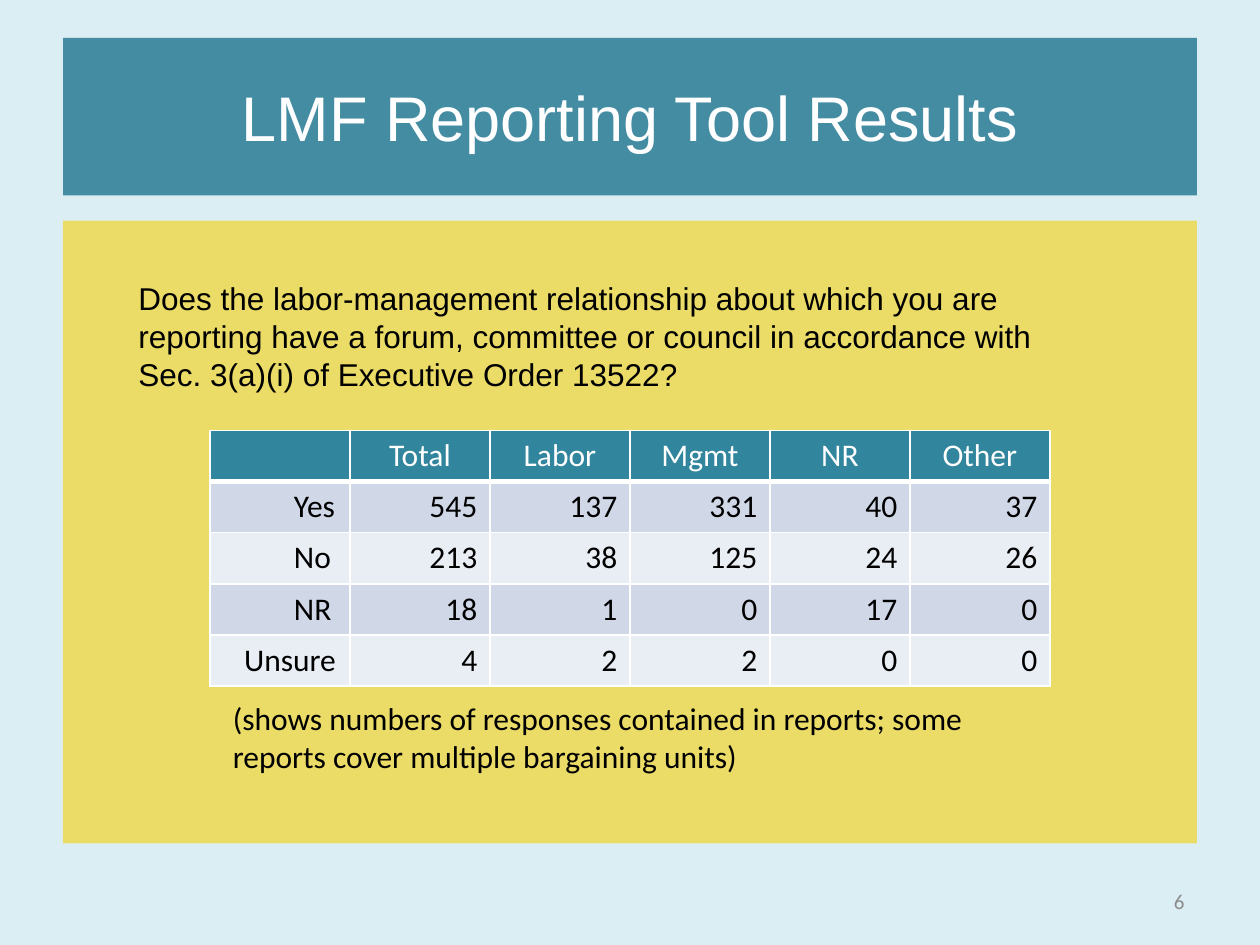
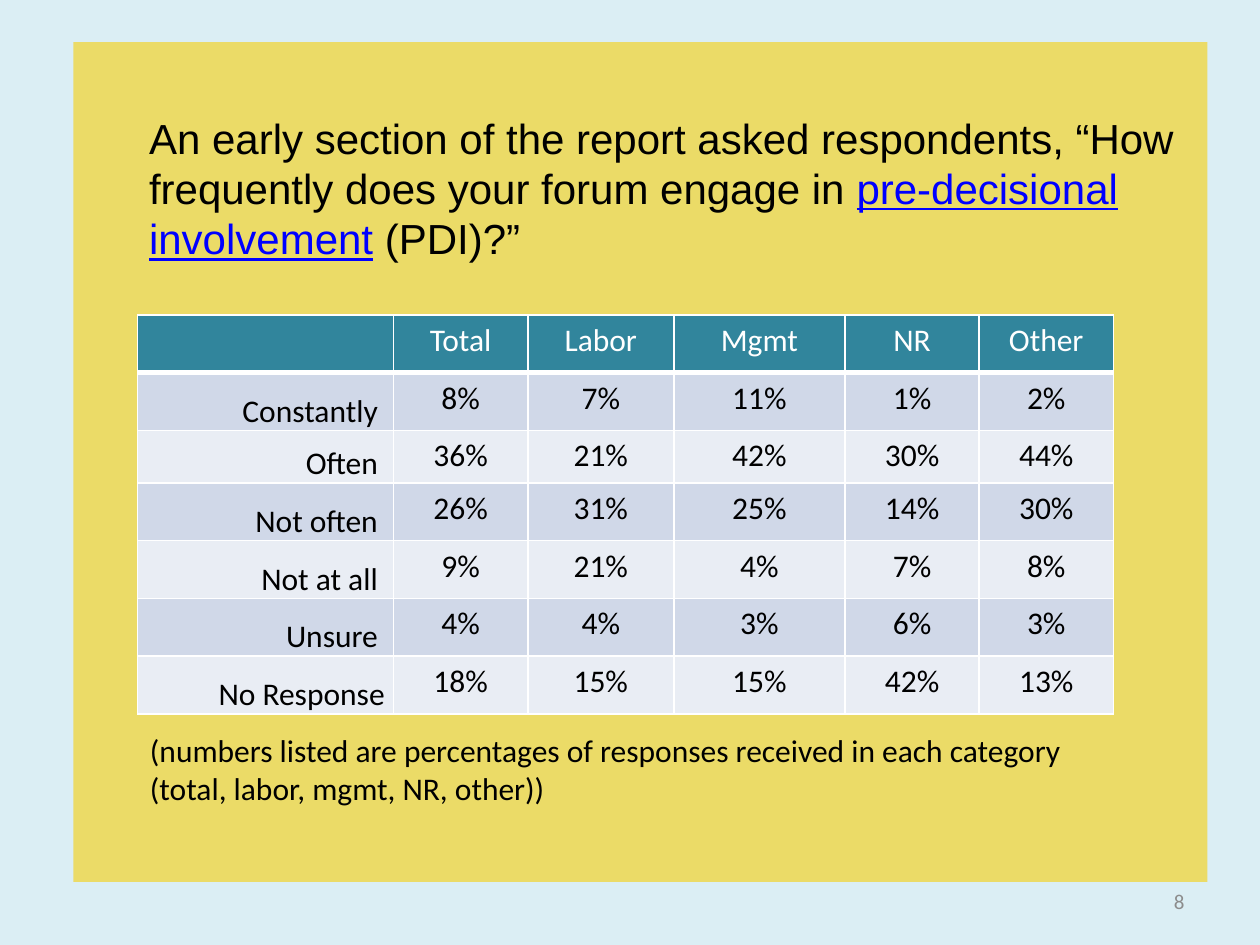
"""Build the two slides of survey results on labor-management forums."""
import dataclasses
import typing

import lxml.etree
import pptx
import pptx.dml.color
import pptx.enum.shapes
import pptx.enum.text
import pptx.oxml.ns
import pptx.util

Pt = pptx.util.Pt
ALIGN = pptx.enum.text.PP_ALIGN
ANCHOR = pptx.enum.text.MSO_ANCHOR


@dataclasses.dataclass(frozen=True)
class Theme:
    """Colours, fonts and type sizes of the deck."""
    back: str = "DBEEF4"
    band: str = "448CA2"
    panel: str = "EBDB67"
    header: str = "31859C"
    stripes: tuple[str, str] = ("D0D8E8", "E9EDF4")
    white: str = "FFFFFF"
    ink: str = "000000"
    link: str = "0000FF"
    muted: str = "8C8C8C"
    heading_font: str = "Arial"
    body_font: str = "Calibri"
    title: float = 36
    question: float = 24
    text: float = 18
    footer: float = 12


T = Theme()


class Box(typing.NamedTuple):
    """Position and size in points."""
    x: float
    y: float
    w: float
    h: float


class Style(typing.NamedTuple):
    """Look of a piece of text."""
    size: float = T.text
    font: str = T.body_font
    color: str = T.ink
    underline: bool = False


class Label(typing.NamedTuple):
    """Row label with its side margins in points."""
    text: str
    left: float
    right: float


@dataclasses.dataclass(frozen=True)
class Grid:
    """Table of answers by respondent group."""
    x: float
    y: float
    widths: list[float]
    heights: list[float]
    labels: list[Label]
    values: list[list[str]]
    label_format: dict[str, typing.Any]
    label_align: ALIGN
    value_align: ALIGN


GROUPS = ["Total", "Labor", "Mgmt", "NR", "Other"]
HEADING = Style(T.title, T.heading_font, T.white)
INTRO = Style(T.text, T.heading_font)
QUESTION = Style(T.question, T.heading_font)
TERM = QUESTION._replace(color=T.link, underline=True)

FORUM_GRID = Grid(
    120, 246, [80] * 6, [29.2] * 5,
    [Label("Yes", 48, 0), Label("No", 48, 0), Label("NR", 48, 0), Label("Unsure", 19.5, 0)],
    [row.split() for row in (
        "545 137 331 40 37", "213 38 125 24 26", "18 1 0 17 0", "4 2 2 0 0")],
    {}, ALIGN.LEFT, ALIGN.RIGHT)

PDI_GRID = Grid(
    78.6, 180, [146.3, 76.7, 83.5, 97.8, 76.7, 76.7], [33, 33, 30, 33, 33, 33, 33],
    [Label(text, 5, 9) for text in
     ("Constantly", "Often", "Not often", "Not at all", "Unsure")]
    + [Label("No Response", 5, 5)],
    [[f"{n}%" for n in row] for row in (
        (8, 7, 11, 1, 2), (36, 21, 42, 30, 44), (26, 31, 25, 14, 30),
        (9, 21, 4, 7, 8), (4, 4, 3, 6, 3), (18, 15, 15, 42, 13))],
    {"vertical_anchor": ANCHOR.BOTTOM, "margin_top": 0, "margin_bottom": 0},
    ALIGN.RIGHT, ALIGN.CENTER)


def rgb(color: str) -> pptx.dml.color.RGBColor:
    """Turn a hex string into a colour."""
    return pptx.dml.color.RGBColor.from_string(color)


def apply(target: typing.Any, formats: dict[str, typing.Any]) -> None:
    """Set each attribute named in the formats."""
    for name, value in formats.items():
        setattr(target, name, value)


def place(sp: typing.Any, box: Box) -> None:
    """Move and size a shape."""
    apply(sp, dict(zip(("left", "top", "width", "height"), map(Pt, box))))


def paint(target: typing.Any, color: str) -> None:
    """Give a shape, cell or background a solid fill."""
    target.fill.solid()
    target.fill.fore_color.rgb = rgb(color)


def write(tf: typing.Any, runs: list[tuple[str, Style]], align: ALIGN = ALIGN.LEFT) -> None:
    """Write styled runs into the first paragraph."""
    p = tf.paragraphs[0]
    p.alignment = align
    for text, style in runs:
        r = p.add_run()
        r.text = text
        apply(r.font, {"size": Pt(style.size), "name": style.font,
                       "underline": style.underline, "bold": False})
        r.font.color.rgb = rgb(style.color)


def add_panel(s: typing.Any, box: Box) -> typing.Any:
    """Add the plain yellow panel."""
    sp = s.shapes.add_shape(pptx.enum.shapes.MSO_SHAPE.RECTANGLE, *map(Pt, box))
    sp.shadow.inherit = False
    paint(sp, T.panel)
    sp.line.fill.background()
    return sp


def add_text(s: typing.Any, box: Box, text: str, style: Style = Style(),
             align: ALIGN = ALIGN.LEFT, anchor: ANCHOR = ANCHOR.TOP) -> None:
    """Add a wrapping text box."""
    tf = s.shapes.add_textbox(*map(Pt, box)).text_frame
    apply(tf, {"word_wrap": True, "vertical_anchor": anchor})
    write(tf, [(text, style)], align)


def add_number(s: typing.Any, number: int) -> None:
    """Add the page number at the lower right."""
    add_text(s, Box(516, 500.5, 168, 28.8), str(number),
             Style(T.footer, color=T.muted), ALIGN.RIGHT, ANCHOR.MIDDLE)


def add_borders(cell: typing.Any, bottom: float) -> None:
    """Draw white cell borders."""
    tc_pr = cell._tc.get_or_add_tcPr()
    qn = pptx.oxml.ns.qn
    for side, width in (("L", 1), ("R", 1), ("T", 1), ("B", bottom)):
        ln = lxml.etree.SubElement(tc_pr, qn(f"a:ln{side}"), w=str(Pt(width)))
        fill = lxml.etree.SubElement(ln, qn("a:solidFill"))
        lxml.etree.SubElement(fill, qn("a:srgbClr"), val=T.white)


def fill_cell(cell: typing.Any, text: str, fill: str, align: ALIGN,
              color: str = T.ink, bottom: float = 1) -> None:
    """Border, colour and write one cell."""
    add_borders(cell, bottom)
    paint(cell, fill)
    write(cell.text_frame, [(text, Style(color=color))], align)


def add_grid(s: typing.Any, grid: Grid) -> None:
    """Add a table with a header row and striped answer rows."""
    rows, cols = len(grid.heights), len(grid.widths)
    box = Box(grid.x, grid.y, sum(grid.widths), sum(grid.heights))
    table = s.shapes.add_table(rows, cols, *map(Pt, box)).table
    apply(table, {"first_row": False, "horz_banding": False})
    for column, width in zip(table.columns, grid.widths):
        column.width = Pt(width)
    for row, height in zip(table.rows, grid.heights):
        row.height = Pt(height)
    for col, text in enumerate(["", *GROUPS]):
        fill_cell(table.cell(0, col), text, T.header, ALIGN.CENTER, T.white, 3)
    for i, (label, values) in enumerate(zip(grid.labels, grid.values)):
        stripe = T.stripes[i % 2]
        cell = table.cell(i + 1, 0)
        apply(cell, {"margin_left": Pt(label.left), "margin_right": Pt(label.right),
                     **grid.label_format})
        fill_cell(cell, label.text, stripe, grid.label_align)
        for col, value in enumerate(values, 1):
            fill_cell(table.cell(i + 1, col), value, stripe, grid.value_align)


def build_forum_slide(prs: typing.Any) -> None:
    """Show how many relationships have a forum."""
    s = prs.slides.add_slide(prs.slide_layouts.get_by_name("Title Only"))
    title = s.shapes.title
    place(title, Box(36, 21.6, 648, 90))
    paint(title, T.band)
    title.text_frame.vertical_anchor = ANCHOR.MIDDLE
    write(title.text_frame, [("LMF Reporting Tool Results", HEADING)], ALIGN.CENTER)
    add_panel(s, Box(36, 126, 648, 356))
    add_grid(s, FORUM_GRID)
    add_text(s, Box(72, 156, 564, 72.7),
             "Does the labor-management relationship about which you are reporting have "
             "a forum, committee or council in accordance with Sec. 3(a)(i) of "
             "Executive Order 13522?", INTRO)
    add_text(s, Box(126, 396, 474, 51),
             "(shows numbers of responses contained in reports; some reports cover "
             "multiple bargaining units)")
    add_number(s, 6)


def build_pdi_slide(prs: typing.Any) -> None:
    """Show how often forums engage in pre-decisional involvement."""
    s = prs.slides.add_slide(prs.slide_layouts.get_by_name("Blank"))
    tf = add_panel(s, Box(42, 24, 648, 480)).text_frame
    apply(tf, {"word_wrap": True, "vertical_anchor": ANCHOR.TOP,
               "margin_left": Pt(43.2), "margin_top": Pt(40)})
    write(tf, [("An early section of the report asked respondents, “How frequently "
                "does your forum engage in ", QUESTION),
               ("pre-decisional involvement", TERM),
               (" (PDI)?”", QUESTION)])
    add_grid(s, PDI_GRID)
    add_text(s, Box(78.6, 414, 564, 51),
             "(numbers listed are percentages of responses received in each category "
             "(total, labor, mgmt, NR, other))")
    add_number(s, 8)


def main() -> None:
    """Build and save the deck."""
    prs = pptx.Presentation()
    apply(prs, {"slide_width": Pt(720), "slide_height": Pt(540)})
    paint(prs.slide_master.background, T.back)
    build_forum_slide(prs)
    build_pdi_slide(prs)
    prs.save("out.pptx")


if __name__ == "__main__":
    main()
